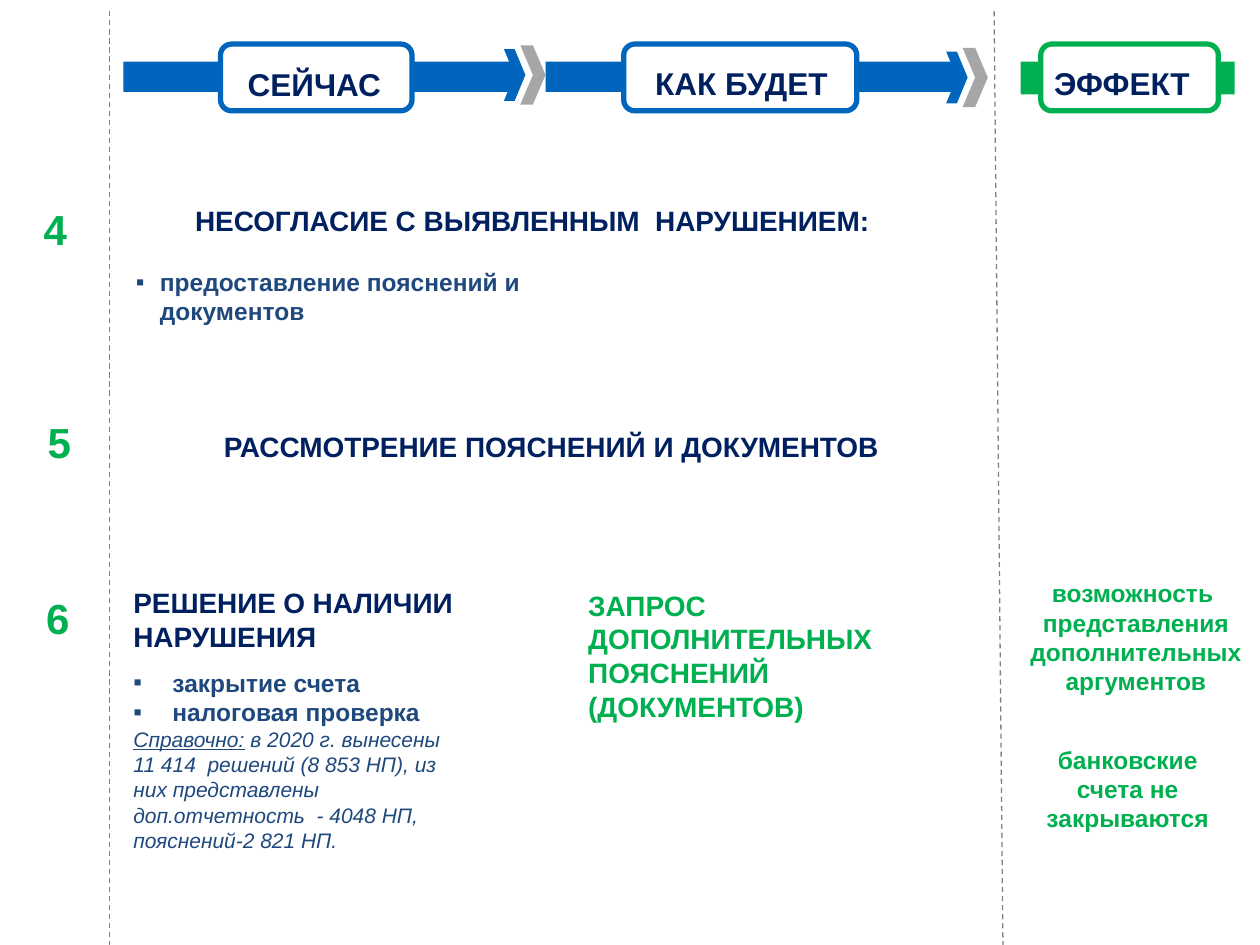
from lxml import etree
from pptx import Presentation
from pptx import util as u
from pptx.dml.color import RGBColor
from pptx.enum import dml, shapes, text
from pptx.oxml import ns

BLUE, GREEN, GRAY, WHITE = "0065BD", "00B050", "A6A6A6", "FFFFFF"
NAVY, SLATE, DASH = "002060", "1F497D", "808080"
CENTER = text.PP_ALIGN.CENTER
LABEL = {"size": u.Pt(18), "bold": True, "name": "Arial", "color": NAVY}
HEADING = {**LABEL, "size": u.Pt(16)}
NUMBER = {**LABEL, "size": u.Pt(24), "color": GREEN}
ITEM = {**LABEL, "size": u.Pt(14), "color": SLATE}
BENEFIT = {**ITEM, "color": GREEN}
GAP = {**LABEL, "name": "Calibri", "color": SLATE}
NOTE = {**ITEM, "size": u.Pt(12), "bold": False, "italic": True}


def rgb(value):
    """Turn a hex string into a colour."""
    return RGBColor.from_string(value)


def inches(box):
    """Turn numbers into lengths."""
    return [u.Inches(value) for value in box]


def paint(shape, fill, line=None):
    """Give a shape a flat fill and an optional 3 pt outline."""
    shape.shadow.inherit = False
    shape.fill.solid()
    shape.fill.fore_color.rgb = rgb(fill)
    if line:
        shape.line.color.rgb = rgb(line)
        shape.line.width = u.Pt(3)
    else:
        shape.line.fill.background()


def add_bullet(paragraph):
    """Put a small square before a paragraph."""
    props = paragraph._p.get_or_add_pPr()
    etree.SubElement(props, ns.qn("a:buFont")).set("typeface", "Arial")
    etree.SubElement(props, ns.qn("a:buChar")).set("char", "▪")


def add_paragraph(frame, runs, indent=(0, 0), bullet=False, **layout):
    """Add a paragraph of (words, format) runs to a text frame."""
    first = frame.paragraphs[0]
    paragraph = frame.add_paragraph() if first.runs else first
    for key, value in layout.items():
        setattr(paragraph, key, value)
    margin, hanging = inches(indent)
    props = paragraph._p.get_or_add_pPr()
    props.set("marL", str(margin))
    props.set("indent", str(hanging))
    if bullet:
        add_bullet(paragraph)
    for words, style in runs:
        run = paragraph.add_run()
        run.text = words
        for key, value in style.items():
            if key == "color":
                run.font.color.rgb = rgb(value)
            else:
                setattr(run.font, key, value)


def add_text(slide, box, *paragraphs):
    """Place a wrapping text box holding the given paragraphs."""
    frame = slide.shapes.add_textbox(*inches(box)).text_frame
    frame.word_wrap = True
    for paragraph in paragraphs:
        add_paragraph(frame, **paragraph)


def plain(words, style, **layout):
    """Describe a paragraph with a single run."""
    return {"runs": [(words, style)], **layout}


def add_divider(slide, start, end):
    """Draw a thin dashed column divider."""
    divider = slide.shapes.add_connector(
        shapes.MSO_CONNECTOR.STRAIGHT, *inches(start + end))
    divider.line.color.rgb = rgb(DASH)
    divider.line.width = u.Pt(0.75)
    divider.line.dash_style = dml.MSO_LINE.DASH
    etree.SubElement(divider._element.spPr, ns.qn("a:effectLst"))


def add_chevron(slide, box, color):
    """Draw a right-pointing chevron that fills the box."""
    left, top, width, height = box
    middle = left + width / 2
    corners = [(middle, top), (left + width, top + height / 2),
               (middle, top + height), (left, top + height),
               (middle, top + height / 2)]
    outline = slide.shapes.build_freeform(*inches((left, top)))
    outline.add_line_segments([inches(corner) for corner in corners])
    paint(outline.convert_to_shape(), color)


def add_double_chevron(slide, left, top):
    """Draw the blue and gray chevrons that close a column band."""
    add_chevron(slide, (left, top + 0.03, 0.17, 0.41), BLUE)
    add_chevron(slide, (left + 0.13, top, 0.2, 0.47), GRAY)


def add_column_header(slide, band, frame, label, words, color):
    """Place a band with a rounded frame and its label on top."""
    kinds = shapes.MSO_SHAPE
    bar = slide.shapes.add_shape(kinds.RECTANGLE, *inches(band))
    paint(bar, color)
    plate = slide.shapes.add_shape(kinds.ROUNDED_RECTANGLE, *inches(frame))
    paint(plate, WHITE, color)
    add_text(slide, label, plain(words, LABEL, indent=(0.19, 0),
                                 alignment=CENTER, line_spacing=1.5))


def add_header_row(slide):
    """Place the three column headers and their chevrons."""
    columns = [
        ((0.98, 0.49, 3.11, 0.24), (1.75, 0.35, 1.52, 0.53),
         (1.61, 0.32, 1.58, 0.5), "СЕЙЧАС", BLUE),
        ((4.33, 0.49, 3.28, 0.24), (4.95, 0.35, 1.85, 0.53),
         (4.57, 0.31, 2.44, 0.56), "КАК БУДЕТ", BLUE),
        ((8.1, 0.49, 1.7, 0.26), (8.26, 0.35, 1.41, 0.53),
         (7.95, 0.31, 1.72, 0.56), "ЭФФЕКТ", GREEN),
    ]
    for column in columns:
        add_column_header(slide, *column)
    add_double_chevron(slide, 4, 0.36)
    add_double_chevron(slide, 7.51, 0.38)


def add_step_numbers(slide):
    """Place the step numbers in the left margin."""
    for number, left, top in (("4", 0.21, 1.57), ("5", 0.24, 3.26),
                              ("6", 0.23, 4.65)):
        add_text(slide, (left, top, 0.46, 0.5),
                 plain(number, NUMBER, alignment=CENTER))


def add_objection_steps(slide):
    """Place steps 4 and 5, which span both process columns."""
    add_text(slide, (0.96, 1.57, 6.78, 0.37),
             plain("НЕСОГЛАСИЕ С ВЫЯВЛЕННЫМ  НАРУШЕНИЕМ:", HEADING,
                   indent=(0.49, 0)))
    add_text(slide, (0.98, 2.07, 3.45, 0.95),
             plain("предоставление пояснений и документов", ITEM,
                   indent=(0.19, -0.19), bullet=True))
    add_text(slide, (0.98, 3.36, 6.79, 0.37),
             plain("РАССМОТРЕНИЕ ПОЯСНЕНИЙ И ДОКУМЕНТОВ", HEADING,
                   alignment=CENTER))


def add_decision_step(slide):
    """Place step 6: the decision now and the request to come."""
    add_text(slide, (0.96, 4.57, 3.37, 0.67),
             {"runs": [("РЕШЕНИЕ", HEADING), (" ", GAP),
                       ("О НАЛИЧИИ", HEADING), (" ", GAP),
                       ("НАРУШЕНИЯ", HEADING)]})
    outcomes = [plain(words, ITEM, indent=(0.6, -0.31), bullet=True)
                for words in ("закрытие счета", "налоговая проверка")]
    facts = (" в 2020 г. вынесены 11 414  решений (8 853 НП), из них "
             "представлены доп.отчетность  - 4048 НП, пояснений-2 821 НП.")
    reference = {"runs": [("Справочно:", {**NOTE, "underline": True}),
                          (facts, NOTE)], "indent": (0.29, 0)}
    add_text(slide, (0.67, 5.25, 3.08, 1.58), *outcomes, reference)
    add_text(slide, (4.57, 4.62, 3.21, 1.24),
             plain("ЗАПРОС ДОПОЛНИТЕЛЬНЫХ ПОЯСНЕНИЙ (ДОКУМЕНТОВ)",
                   {**HEADING, "color": GREEN}))


def add_effects(slide):
    """Place the benefits in the right column."""
    benefits = [
        ((7.87, 4.54, 2.29, 1.26),
         "возможность  представления дополнительных аргументов"),
        ((8.1, 5.86, 1.7, 0.81), "банковские счета не закрываются"),
    ]
    for box, words in benefits:
        add_text(slide, box, plain(words, BENEFIT, alignment=CENTER))


def main():
    """Build the slide and save it."""
    deck = Presentation()
    deck.slide_width, deck.slide_height = inches((10, 7.5))
    slide = deck.slides.add_slide(deck.slide_layouts[6])
    add_divider(slide, (0.87, 0.09), (0.87, 7.5))
    add_divider(slide, (7.89, 0.09), (7.96, 7.5))
    for region in (add_header_row, add_step_numbers, add_objection_steps,
                   add_decision_step, add_effects):
        region(slide)
    deck.save("out.pptx")


if __name__ == "__main__":
    main()
